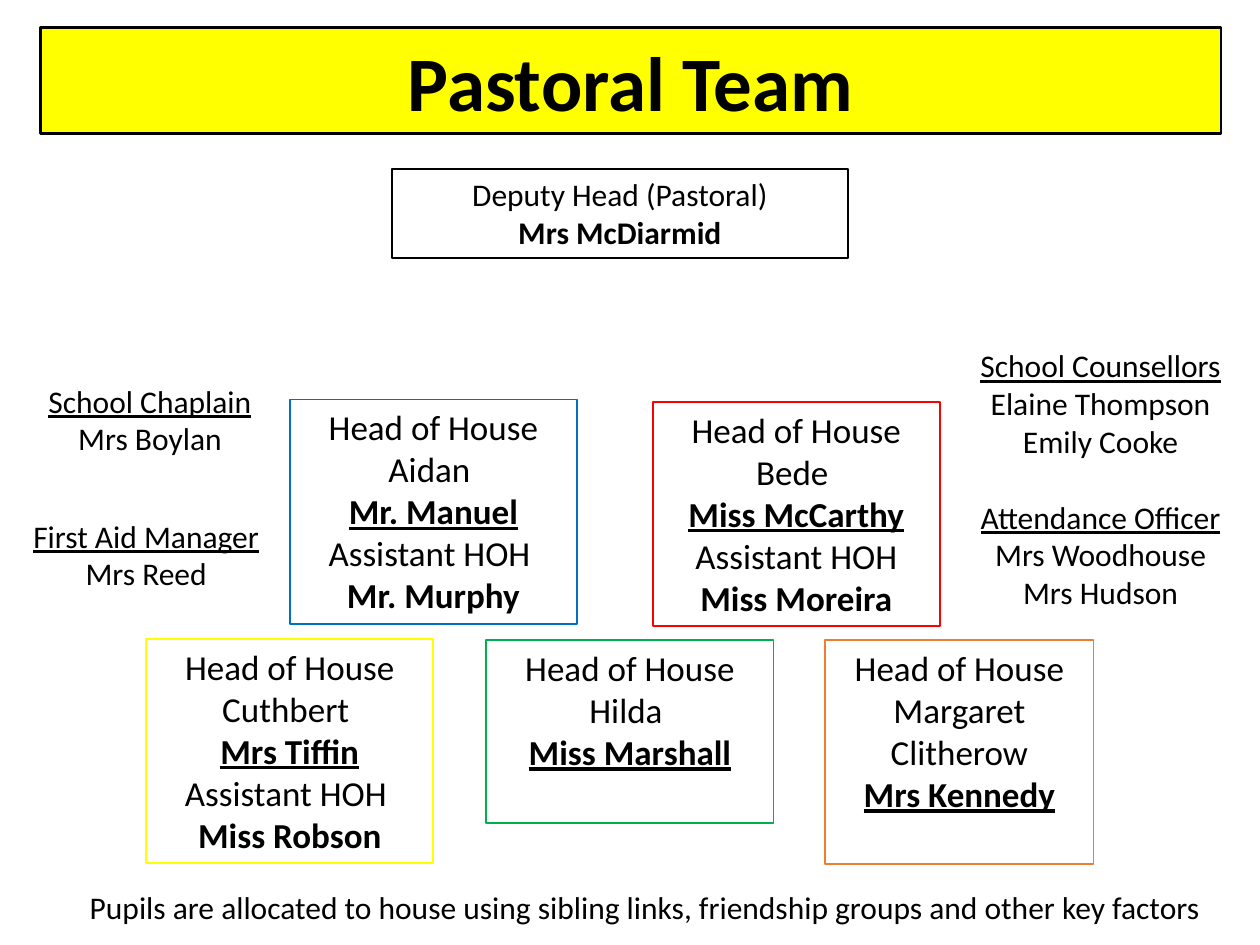
from pptx import Presentation
from pptx.dml.color import RGBColor
from pptx.enum.shapes import MSO_SHAPE
from pptx.enum.text import MSO_ANCHOR, MSO_AUTO_SIZE, PP_ALIGN
from pptx.util import Inches, Pt

FONT = "Calibri"
BLACK = "000000"

TITLE = ("Pastoral Team", (0.32, 0.22, 9.37, 0.84))

# Lines are (text, style): b = bold, u = underlined, g = gap above
# Boxes are (position, outline colour, text size, lines)
BOXES = [
    ((3.11, 1.34, 3.62, 0.71), BLACK, 18,
     [("Deputy Head (Pastoral)", ""), ("Mrs McDiarmid", "b")]),
    ((2.3, 3.17, 2.28, 1.78), "0070C0", 20,
     [("Head of House Aidan ", ""), ("Mr. Manuel", "bu"),
      ("Assistant HOH ", ""), ("Mr. Murphy", "b")]),
    ((5.18, 3.19, 2.28, 1.78), "FF0000", 20,
     [("Head of House Bede ", ""), ("Miss McCarthy", "bu"),
      ("Assistant HOH", ""), ("Miss Moreira", "b")]),
    ((1.16, 5.07, 2.28, 1.78), "FFFF00", 20,
     [("Head of House Cuthbert ", ""), ("Mrs Tiffin", "bu"),
      ("Assistant HOH ", ""), ("Miss Robson", "b")]),
    ((3.86, 5.08, 2.28, 1.45), "00B050", 20,
     [("Head of House Hilda ", ""), ("Miss Marshall", "bu")]),
    ((6.55, 5.08, 2.13, 1.78), "ED7D31", 20,
     [("Head of House Margaret Clitherow", ""), ("Mrs Kennedy", "bu")]),
]

# Notes are (position, lines)
NOTES = [
    ((0.05, 2.98, 2.28, 1.31), [("School Chaplain", "u"), ("Mrs Boylan", "")]),
    ((0.02, 4.05, 2.28, 1.31), [("First Aid Manager", "u"), ("Mrs Reed", "")]),
    ((7.61, 2.7, 2.25, 2.52),
     [("School Counsellors", "u"), ("Elaine Thompson", ""), ("Emily Cooke", ""),
      ("Attendance Officer", "ug"), ("Mrs Woodhouse", ""), ("Mrs Hudson", "")]),
    ((0.56, 7, 9.12, 0.4),
     [("Pupils are allocated to house using sibling links, "
       "friendship groups and other key factors", "")]),
]


def color(hex_text):
    return RGBColor.from_string(hex_text)


def place(position):
    return [Inches(v) for v in position]


def outline(sp, hex_text, width):
    sp.line.color.rgb = color(hex_text)
    sp.line.width = Pt(width)


def write(sp, lines, size):
    """Fill a shape with centred lines, starting at its top."""
    tf = sp.text_frame
    tf.word_wrap = True
    tf.auto_size = MSO_AUTO_SIZE.NONE
    tf.vertical_anchor = MSO_ANCHOR.TOP
    tf.text = "\n".join(text for text, _ in lines)
    for p, (_, style) in zip(tf.paragraphs, lines):
        p.alignment = PP_ALIGN.CENTER
        if "g" in style:
            p.space_before = Pt(size * 1.2)
        for r in p.runs:
            r.font.name = FONT
            r.font.size = Pt(size)
            r.font.color.rgb = color(BLACK)
            r.font.bold = "b" in style
            r.font.underline = "u" in style


def main():
    prs = Presentation()
    prs.slide_width, prs.slide_height = Inches(10), Inches(7.5)
    s = prs.slides.add_slide(prs.slide_layouts[5])

    text, position = TITLE
    title = s.shapes.title
    title.left, title.top, title.width, title.height = place(position)
    title.fill.solid()
    title.fill.fore_color.rgb = color("FFFF00")
    outline(title, BLACK, 1.5)
    write(title, [(text, "b")], 44)

    for position, line_color, size, lines in BOXES:
        sp = s.shapes.add_shape(MSO_SHAPE.RECTANGLE, *place(position))
        sp.shadow.inherit = False
        sp.fill.background()
        outline(sp, line_color, 1)
        write(sp, lines, size)

    for position, lines in NOTES:
        write(s.shapes.add_textbox(*place(position)), lines, 18)

    prs.save("out.pptx")


if __name__ == "__main__":
    main()
